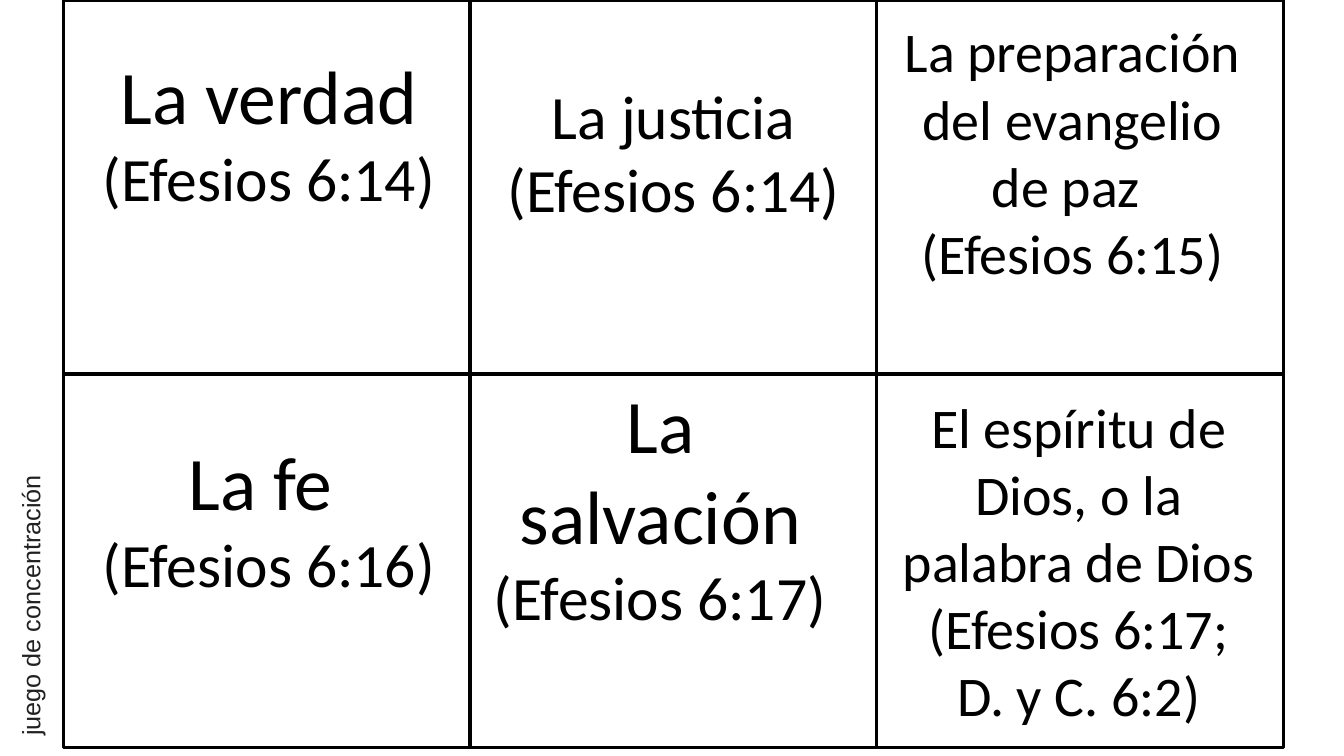
import pptx
import pptx.util
import pptx.dml.color
import pptx.enum.shapes
import pptx.enum.text

Pt = pptx.util.Pt
COLORS = {"card": "FFFFFF", "ink": "000000", "caption": "212121"}
GRID_LEFT, CARD_WIDTH, CARD_HEIGHT = 45.2, 290.6, 267.1
TEXT_WIDTH = 269.3


class CardSheet:
    def __init__(self, slide, font):
        self.slide = slide
        self.font = font

    def color(self, key):
        return pptx.dml.color.RGBColor.from_string(COLORS[key])

    def card(self, column, row):
        card = self.slide.shapes.add_shape(
            pptx.enum.shapes.MSO_SHAPE.RECTANGLE,
            Pt(GRID_LEFT + column * CARD_WIDTH), Pt(row * CARD_HEIGHT),
            Pt(CARD_WIDTH), Pt(CARD_HEIGHT))
        card.shadow.inherit = False
        card.fill.solid()
        card.fill.fore_color.rgb = self.color("card")
        card.line.color.rgb = self.color("ink")
        card.line.width = Pt(2.25)

    def run(self, paragraph, wording, size, font, color):
        run = paragraph.add_run()
        run.text = wording
        run.font.size = Pt(size)
        run.font.name = font
        run.font.color.rgb = self.color(color)

    def verse(self, left, top, width, height, paragraphs):
        verse = self.slide.shapes.add_textbox(Pt(left), Pt(top), Pt(width), Pt(height))
        frame = verse.text_frame
        frame.word_wrap = True
        frame.auto_size = pptx.enum.text.MSO_AUTO_SIZE.SHAPE_TO_FIT_TEXT
        for index, runs in enumerate(paragraphs):
            paragraph = frame.add_paragraph() if index else frame.paragraphs[0]
            paragraph.alignment = pptx.enum.text.PP_ALIGN.CENTER
            for wording, size in runs:
                self.run(paragraph, wording, size, self.font, "ink")

    def side_title(self, left, top, width, height, wording):
        title = self.slide.shapes.title
        title.left, title.top = Pt(left), Pt(top)
        title.width, title.height = Pt(width), Pt(height)
        title.rotation = 270
        frame = title.text_frame
        frame.word_wrap = True
        frame.auto_size = pptx.enum.text.MSO_AUTO_SIZE.SHAPE_TO_FIT_TEXT
        frame.vertical_anchor = pptx.enum.text.MSO_ANCHOR.TOP
        paragraph = frame.paragraphs[0]
        paragraph.alignment = pptx.enum.text.PP_ALIGN.LEFT
        self.run(paragraph, wording, 18, "Arial", "caption")


VERSES = [
    (57.6, 31.7, TEXT_WIDTH, 126, [[("La verdad ", 54), ("(Efesios 6:14)", 44)]]),
    (331.2, 51.8, 300.2, 113.8, [[("La justicia (Efesios 6:14)", 44)]]),
    (631.4, 8.6, TEXT_WIDTH, 200.9,
     [[("La preparación del evangelio de paz ", 40)], [("(Efesios 6:15)", 40)]]),
    (57.6, 307.4, TEXT_WIDTH, 126, [[("La fe ", 54)], [("(Efesios 6:16)", 44)]]),
    (337, 266.4, TEXT_WIDTH, 191.5, [[("La salvación ", 54), ("(Efesios 6:17)", 44)]]),
    (635.8, 276.5, TEXT_WIDTH, 249.8,
     [[("El espíritu de Dios, o la palabra de Dios (Efesios 6:17;", 40)],
      [("D. y C. 6:2)", 40)]]),
]


def main():
    deck = pptx.Presentation()
    deck.slide_width, deck.slide_height = Pt(960), Pt(540)
    sheet = CardSheet(deck.slides.add_slide(deck.slide_layouts[5]), "Calibri")
    for column in range(3):
        for row in range(2):
            sheet.card(column, row)
    for verse in VERSES:
        sheet.verse(*verse)
    sheet.side_title(-245.5, 251.3, 534.2, 28.8, "juego de concentración")
    deck.save("out.pptx")


if __name__ == "__main__":
    main()
